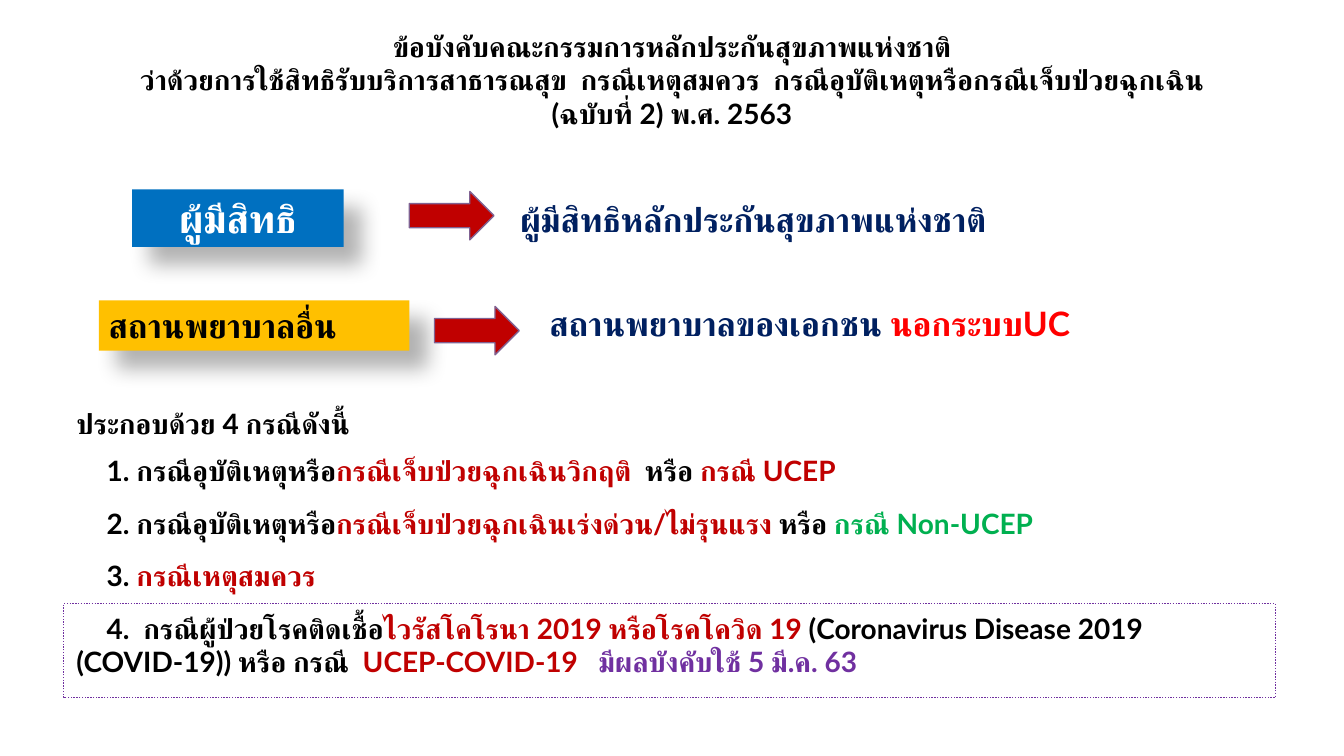
from lxml.etree import SubElement
from pptx import Presentation
from pptx.dml.color import RGBColor
from pptx.enum.dml import MSO_LINE
from pptx.enum.shapes import MSO_SHAPE
from pptx.enum.text import MSO_ANCHOR, PP_ALIGN
from pptx.oxml.ns import qn
from pptx.util import Emu, Pt

PX = 9144
FONT = "Lato"
COLORS = {
    "white": "FFFFFF", "black": "000000", "blue": "0070C0", "amber": "FFC000",
    "navy": "002060", "crimson": "C00000", "red": "FF0000", "green": "00B050",
    "purple": "7030A0", "edge": "806292",
}
TITLE = [
    "ข้อบังคับคณะกรรมการหลักประกันสุขภาพแห่งชาติ",
    "ว่าด้วยการใช้สิทธิรับบริการสาธารณสุข  กรณีเหตุสมควร  กรณีอุบัติเหตุหรือกรณีเจ็บป่วยฉุกเฉิน",
    "(ฉบับที่ 2) พ.ศ. 2563",
]
INTRO = [("ประกอบด้วย 4 กรณีดังนี้", "black")]
CASES = [
    [("1. กรณีอุบัติเหตุหรือ", "black"), ("กรณีเจ็บป่วยฉุกเฉินวิกฤติ  ", "crimson"),
     ("หรือ ", "black"), ("กรณี UCEP", "crimson")],
    [("2. กรณีอุบัติเหตุหรือ", "black"),
     ("กรณีเจ็บป่วยฉุกเฉินเร่งด่วน/ไม่รุนแรง ", "crimson"),
     ("หรือ ", "black"), ("กรณี Non-UCEP", "green")],
    [("3. ", "black"), ("กรณีเหตุสมควร", "crimson")],
    [("4.  กรณีผู้ป่วยโรคติดเชื้อ", "black"),
     ("ไวรัสโคโรนา 2019 หรือโรคโควิด 19 ", "crimson"),
     ("(Coronavirus Disease 2019 (COVID-19)) หรือ กรณี  ", "black"),
     ("UCEP-COVID-19   ", "crimson"), ("มีผลบังคับใช้ 5 มี.ค. 63", "purple")],
]


def rgb(name):
    """Return the named colour."""
    return RGBColor.from_string(COLORS[name])


def box(px):
    """Turn left, top, width and height in px into EMU."""
    return [Emu(v * PX) for v in px]


def add_runs(p, runs, size):
    """Add bold coloured runs to a paragraph."""
    for text, color in runs:
        r = p.add_run()
        r.text = text
        r.font.name = FONT
        r.font.size = Pt(size)
        r.font.bold = True
        r.font.color.rgb = rgb(color)
        SubElement(r.font._element, qn("a:cs"), typeface=FONT)


def add_shape(s, kind, px, fill=None, line=None):
    """Add a flat preset shape."""
    sp = s.shapes.add_shape(kind, *box(px))
    sp.shadow.inherit = False
    if fill:
        sp.fill.solid()
        sp.fill.fore_color.rgb = rgb(fill)
    else:
        sp.fill.background()
    if line:
        sp.line.color.rgb = rgb(line)
        sp.line.width = Pt(1)
    else:
        sp.line.fill.background()
    return sp


def add_shadow(sp):
    """Give a shape a soft shadow to the lower right."""
    effects = sp._element.spPr.find(qn("a:effectLst"))
    shadow = SubElement(effects, qn("a:outerShdw"), blurRad=str(Pt(15)), dist=str(Pt(18)),
                        dir="2700000", algn="tl", rotWithShape="0")
    color = SubElement(shadow, qn("a:srgbClr"), val=COLORS["black"])
    SubElement(color, qn("a:alpha"), val="30000")


def add_label(s, px, text, fill, color, size, align):
    """Add a filled label with a shadow."""
    sp = add_shape(s, MSO_SHAPE.RECTANGLE, px, fill)
    add_shadow(sp)
    tf = sp.text_frame
    tf.vertical_anchor = MSO_ANCHOR.MIDDLE
    p = tf.paragraphs[0]
    p.alignment = align
    add_runs(p, [(text, color)], size)


def add_text(s, px, runs, size):
    """Add a text box and return its text frame."""
    tf = s.shapes.add_textbox(*box(px)).text_frame
    tf.word_wrap = True
    add_runs(tf.paragraphs[0], runs, size)
    return tf


def add_title(s, px, lines):
    """Add the centred heading."""
    tf = add_shape(s, MSO_SHAPE.RECTANGLE, px, "white").text_frame
    tf.vertical_anchor = MSO_ANCHOR.TOP
    for i, text in enumerate(lines):
        p = tf.add_paragraph() if i else tf.paragraphs[0]
        p.alignment = PP_ALIGN.CENTER
        add_runs(p, [(text, "black")], 20)


def add_cases(s, px):
    """Add the introduction and the numbered cases."""
    tf = add_text(s, px, INTRO, 20)
    for i, runs in enumerate(CASES):
        p = tf.add_paragraph()
        p.space_before = Pt(13.5 if i else 10)
        pPr = p._p.get_or_add_pPr()
        pPr.set("marL", "0")
        pPr.set("indent", str(30 * PX))
        add_runs(p, runs, 20)


def main():
    """Build the slide."""
    prs = Presentation()
    prs.slide_width, prs.slide_height = Emu(1333 * PX), Emu(750 * PX)
    s = prs.slides.add_slide(prs.slide_layouts[6])
    add_cases(s, (66, 398, 1227, 281))
    add_label(s, (131, 188, 210, 57), "ผู้มีสิทธิ", "blue", "white", 28, PP_ALIGN.CENTER)
    add_label(s, (98, 298, 308, 50), "สถานพยาบาลอื่น", "amber", "black", 24, PP_ALIGN.LEFT)
    add_text(s, (506, 192, 547, 50), [("ผู้มีสิทธิหลักประกันสุขภาพแห่งชาติ", "navy")], 24)
    add_text(s, (535, 296, 606, 50),
             [("สถานพยาบาลของเอกชน ", "navy"), ("นอกระบบUC", "red")], 24)
    for left, top in ((406, 190), (431, 304)):
        add_shape(s, MSO_SHAPE.RIGHT_ARROW, (left, top, 84, 48), "crimson", "edge")
    add_title(s, (0, 24, 1333, 111), TITLE)
    frame = add_shape(s, MSO_SHAPE.RECTANGLE, (63, 599, 1202, 93), line="purple")
    frame.line.dash_style = MSO_LINE.ROUND_DOT
    prs.save("out.pptx")


if __name__ == "__main__":
    main()
